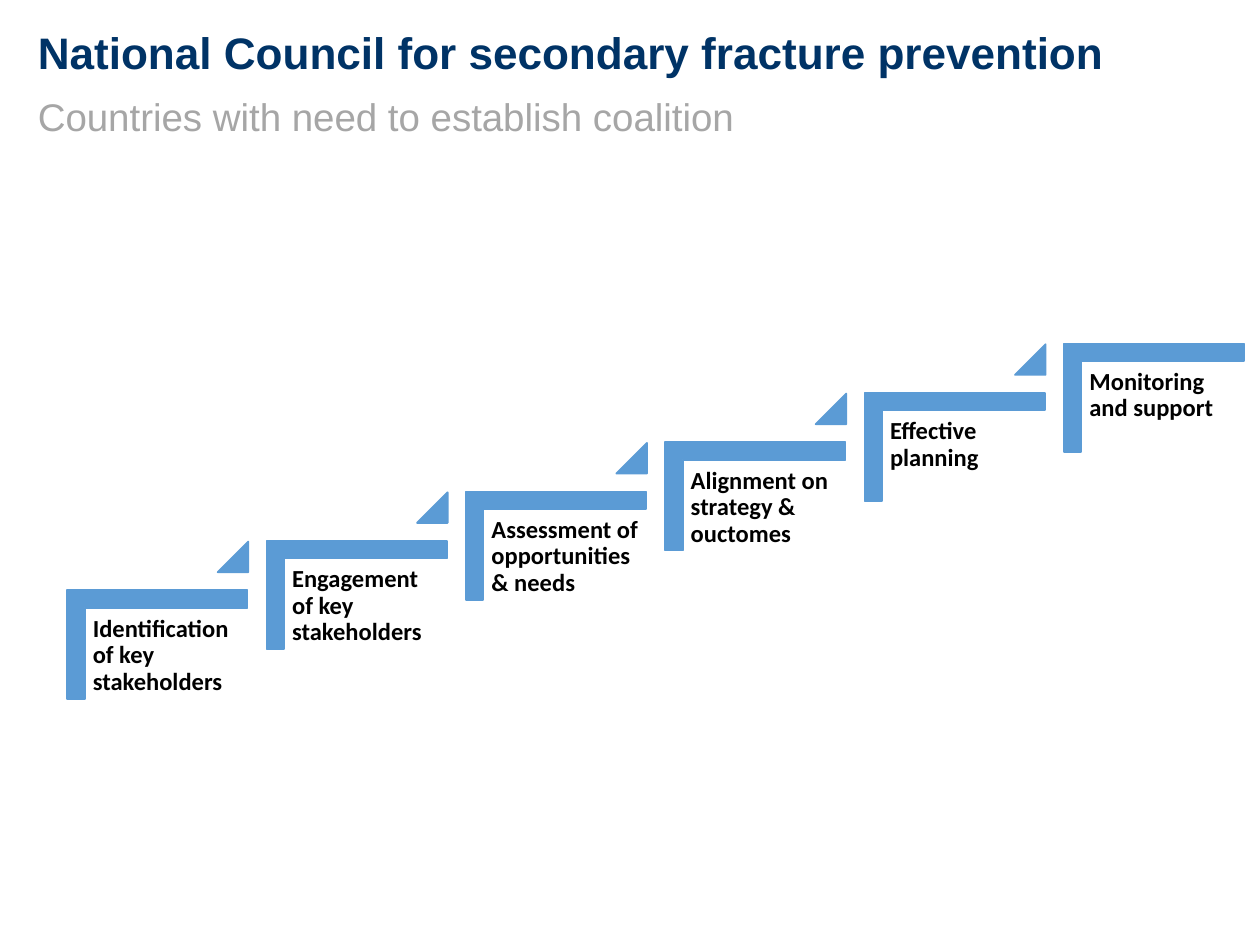
from dataclasses import dataclass

from pptx import Presentation
from pptx.dml.color import RGBColor
from pptx.enum.shapes import MSO_SHAPE
from pptx.enum.text import MSO_ANCHOR, MSO_AUTO_SIZE, PP_ALIGN
from pptx.util import Pt

CORNER = MSO_SHAPE.CORNER
WEDGE = MSO_SHAPE.ISOSCELES_TRIANGLE
TOP, BOTTOM = MSO_ANCHOR.TOP, MSO_ANCHOR.BOTTOM
LEFT = PP_ALIGN.LEFT
NO_FIT = MSO_AUTO_SIZE.NONE


@dataclass(frozen=True)
class Theme:
    navy: RGBColor = RGBColor(0x00, 0x33, 0x66)
    gray: RGBColor = RGBColor(0xA6, 0xA6, 0xA6)
    blue: RGBColor = RGBColor(0x5B, 0x9B, 0xD5)
    black: RGBColor = RGBColor(0, 0, 0)
    head: str = "Arial"
    body: str = "Calibri"
    title: float = 25.2
    sub: float = 22
    label: float = 14


THEME = Theme()

STEPS = (
    "Identification of key stakeholders",
    "Engagement of key stakeholders",
    "Assessment of opportunities & needs",
    "Alignment on strategy & ouctomes",
    "Effective planning",
    "Monitoring and support",
)
# Each step moves right by RUN and up by RISE
RUN, RISE = 113.9, 28.2


def write(box, text, font, size, color, bold, anchor):
    frame = box.text_frame
    frame.word_wrap = True
    frame.auto_size = NO_FIT
    frame.vertical_anchor = anchor
    para = frame.paragraphs[0]
    para.alignment = LEFT
    para.line_spacing = 0.9
    para.space_before = Pt(0)
    run = para.add_run()
    run.text = text
    run.font.name = font
    run.font.size = Pt(size)
    run.font.bold = bold
    run.font.color.rgb = color


def place(box, left, top, width, height):
    box.left, box.top = Pt(left), Pt(top)
    box.width, box.height = Pt(width), Pt(height)


def add_solid(slide, kind, left, top, width, height, *ratios):
    shape = slide.shapes.add_shape(kind, Pt(left), Pt(top), Pt(width), Pt(height))
    shape.shadow.inherit = False
    shape.fill.solid()
    shape.fill.fore_color.rgb = THEME.blue
    shape.line.color.rgb = THEME.blue
    shape.line.width = Pt(1)
    for i, ratio in enumerate(ratios):
        shape.adjustments[i] = ratio
    return shape


def add_label(slide, text, left, top):
    box = slide.shapes.add_textbox(Pt(left), Pt(top), Pt(93), Pt(81.4))
    frame = box.text_frame
    frame.margin_left = frame.margin_right = Pt(4.2)
    frame.margin_top = frame.margin_bottom = Pt(4.2)
    write(box, text, THEME.body, THEME.label, THEME.black, True, TOP)


def add_step(slide, i, text):
    x, y = 48.8 + i * RUN, 309.5 - i * RISE
    corner = add_solid(slide, CORNER, x + 10.2, y + 7.3, 61.9, 103, 0.161, 0.161)
    corner.rotation = 90
    add_label(slide, text, x, y + 38.3)
    # A wedge leads up to the next step
    if i < len(STEPS) - 1:
        add_solid(slide, WEDGE, x + 75.6, y, 17.5, 17.5, 1)


def main():
    deck = Presentation()
    deck.slide_width, deck.slide_height = Pt(720), Pt(540)
    slide = deck.slides.add_slide(deck.slide_layouts[0])

    # Headings
    title, sub = slide.shapes.title, slide.placeholders[1]
    place(title, 14.4, 10.1, 645, 38.9)
    write(title, "National Council for secondary fracture prevention",
          THEME.head, THEME.title, THEME.navy, True, BOTTOM)
    place(sub, 14.4, 52.6, 645, 39.6)
    write(sub, "Countries with need to establish coalition",
          THEME.head, THEME.sub, THEME.gray, False, TOP)

    # Staircase
    for i, text in enumerate(STEPS):
        add_step(slide, i, text)

    deck.save("out.pptx")


if __name__ == "__main__":
    main()
